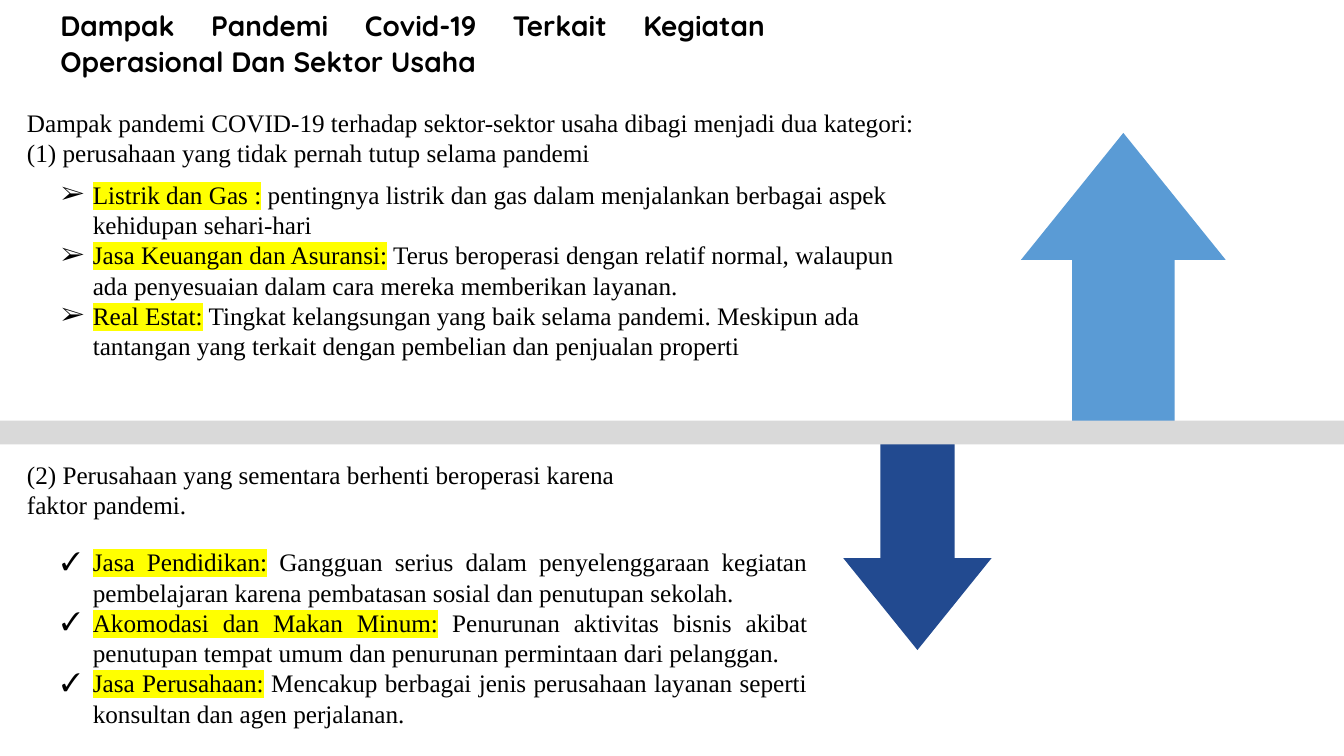
from lxml import etree
from pptx import Presentation
from pptx.dml.color import RGBColor
from pptx.enum.shapes import MSO_SHAPE as Preset
from pptx.enum.text import MSO_AUTO_SIZE as AutoSize, PP_ALIGN as Align
from pptx.oxml.ns import qn
from pptx.util import Cm, Pt

BODY_FONT = "Times New Roman"
OPEN_SECTORS = [
    ("Listrik dan Gas :", " pentingnya listrik dan gas dalam menjalankan berbagai aspek kehidupan sehari-hari"),
    ("Jasa Keuangan dan Asuransi:", " Terus beroperasi dengan relatif normal, walaupun ada penyesuaian dalam cara mereka memberikan layanan."),
    ("Real Estat:", " Tingkat kelangsungan yang baik selama pandemi. Meskipun ada tantangan yang terkait dengan pembelian dan penjualan properti"),
]
CLOSED_SECTORS = [
    ("Jasa Pendidikan:", " Gangguan serius dalam penyelenggaraan kegiatan pembelajaran karena pembatasan sosial dan penutupan sekolah."),
    ("Akomodasi dan Makan Minum:", " Penurunan aktivitas bisnis akibat penutupan tempat umum dan penurunan permintaan dari pelanggan."),
    ("Jasa Perusahaan:", " Mencakup berbagai jenis perusahaan layanan seperti konsultan dan agen perjalanan."),
]


def color(value):
    return RGBColor.from_string(value)


def add_text(para, text, font=BODY_FONT, size=18, bold=False, ink="000000", highlight=None):
    span = para.add_run()
    span.text = text
    span.font.name = font
    span.font.size = Pt(size)
    span.font.bold = bold
    span.font.color.rgb = color(ink)
    if highlight:
        mark = etree.Element(qn("a:highlight"))
        etree.SubElement(mark, qn("a:srgbClr"), val=highlight)
        span.font._element.find(qn("a:solidFill")).addnext(mark)
    return span


class SlideBuilder:
    highlight = "FFFF00"
    hang = Cm(0.79)

    def __init__(self, deck):
        self.page = deck.slides.add_slide(deck.slide_layouts[6])

    def shape(self, preset, left, top, width, height, fill):
        shape = self.page.shapes.add_shape(preset, Cm(left), Cm(top), Cm(width), Cm(height))
        shape.shadow.inherit = False
        shape.fill.solid()
        shape.fill.fore_color.rgb = color(fill)
        shape.line.fill.background()
        return shape

    def arrow(self, left, top, width, height, fill, rotation=0):
        arrow = self.shape(Preset.UP_ARROW, left, top, width, height, fill)
        arrow.adjustments[0] = 0.5
        arrow.adjustments[1] = 0.62
        arrow.rotation = rotation

    def frame(self, left, top, width, height):
        box = self.page.shapes.add_textbox(Cm(left), Cm(top), Cm(width), Cm(height))
        box.text_frame.word_wrap = True
        box.text_frame.auto_size = AutoSize.SHAPE_TO_FIT_TEXT
        return box.text_frame

    def paragraphs(self, frame, count, align):
        for index in range(count):
            para = frame.add_paragraph() if index else frame.paragraphs[0]
            para.alignment = align
            yield para

    def title(self, text, *place):
        para = next(self.paragraphs(self.frame(*place), 1, Align.JUSTIFY))
        para.line_spacing = 1.07
        para.space_after = Pt(8)
        para._p.get_or_add_pPr().set("marL", str(Cm(1.27)))
        add_text(para, text, font="Quicksand", size=20, bold=True)

    def text(self, lines, *place, align=Align.LEFT):
        for para, line in zip(self.paragraphs(self.frame(*place), len(lines), align), lines):
            add_text(para, line)

    def bullets(self, items, bullet, *place, align=Align.LEFT):
        paras = self.paragraphs(self.frame(*place), len(items), align)
        for para, (sector, detail) in zip(paras, items):
            props = para._p.get_or_add_pPr()
            props.set("marL", str(self.hang))
            props.set("indent", str(-self.hang))
            etree.SubElement(props, qn("a:buFont"), typeface=BODY_FONT)
            etree.SubElement(props, qn("a:buChar"), char=bullet)
            add_text(para, sector, highlight=self.highlight)
            add_text(para, detail)


def main():
    deck = Presentation()
    deck.slide_width, deck.slide_height = Cm(33.87), Cm(19.05)
    slide = SlideBuilder(deck)
    slide.arrow(25.73, 3.35, 5.16, 7.26, "5A9BD5")
    slide.arrow(21.25, 11.1, 3.74, 5.28, "224A90", rotation=180)
    slide.shape(Preset.RECTANGLE, 0, 10.6, 33.87, 0.6, "D9D9D9")
    slide.title("Dampak Pandemi Covid-19 Terkait Kegiatan Operasional Dan Sektor Usaha", 0, 0.03, 19.53, 2)
    slide.text(
        ["Dampak pandemi COVID-19 terhadap sektor-sektor usaha dibagi menjadi dua kategori:",
         "(1) perusahaan yang tidak pernah tutup selama pandemi"],
        0.43, 2.57, 24.43, 1.8, align=Align.JUSTIFY)
    slide.text(["(2) Perusahaan yang sementara berhenti beroperasi karena faktor pandemi."],
               0.43, 11.45, 16.94, 1.8)
    slide.bullets(OPEN_SECTORS, "➢", 1.3, 4.39, 21.77, 5.64)
    slide.bullets(CLOSED_SECTORS, "✓", 1.3, 13.65, 19.3, 5.64, align=Align.JUSTIFY)
    deck.save("out.pptx")


if __name__ == "__main__":
    main()
